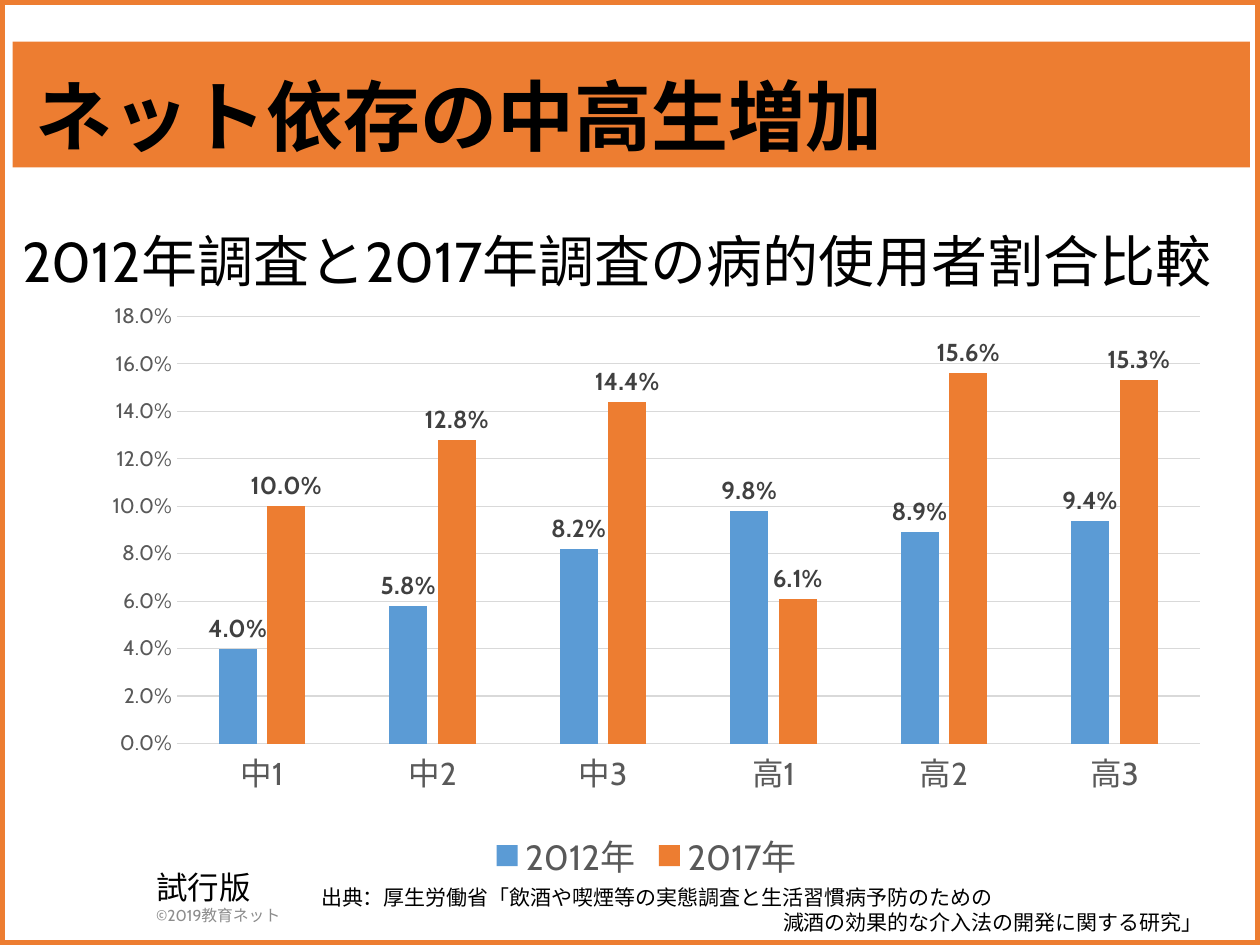
"""Build a slide comparing problem internet use among students in 2012 and 2017."""
from lxml.etree import SubElement
from pptx import Presentation
from pptx.chart.data import CategoryChartData
from pptx.dml.color import RGBColor
from pptx.enum.chart import XL_CHART_TYPE, XL_LABEL_POSITION, XL_LEGEND_POSITION, XL_TICK_MARK
from pptx.enum.shapes import MSO_SHAPE
from pptx.enum.text import MSO_ANCHOR, PP_ALIGN
from pptx.oxml import parse_xml
from pptx.oxml.ns import nsdecls, qn
from pptx.util import Pt

LATIN, ASIAN = "Cabin", "Noto Sans CJK JP"
ORANGE, BLUE, BLACK, GRAY, RULE = "ED7D31", "5B9BD5", "000000", "595959", "D9D9D9"
SIZE = (720, 540)

TITLE = "ネット依存の中高生増加"
NOTICE = [("試行版", 18, BLACK, LATIN, 0), ("©2019教育ネット", 9, "8C8C8C", LATIN, 0)]
HEAD = [("2012年調査と2017年調査の病的使用者割合比較", 32, BLACK, LATIN, 0)]
SOURCE = [
    ("出典：厚生労働省「飲酒や喫煙等の実態調査と生活習慣病予防のための", 12, BLACK, ASIAN, 0),
    ("減酒の効果的な介入法の開発に関する研究」", 12, BLACK, ASIAN, 22 * 12),
]
GRADES = ["中1", "中2", "中3", "高1", "高2", "高3"]
SERIES = [
    ("2012年", BLUE, [0.04, 0.058, 0.082, 0.098, 0.089, 0.094]),
    ("2017年", ORANGE, [0.1, 0.128, 0.144, 0.061, 0.156, 0.153]),
]
PLOT = {"x": 0.084, "y": 0.066, "w": 0.905, "h": 0.698}
PLACES = {
    "border": (0, 0, *SIZE),
    "notice": (82.08, 492.48, 208.08, 41.04),
    "bar": (7.2, 23.76, 707.04, 72),
    "title": (12.96, 38.16, 626.4, 61.92),
    "chart": (46.8, 157.68, 645.84, 349.92),
    "head": (5.76, 126, 725.04, 46.08),
    "source": (176.4, 501.84, 645.84, 36),
}


def put(item, **values):
    for name, value in values.items():
        setattr(item, name, value)


def box(name):
    return [Pt(part) for part in PLACES[name]]


def tint(item, color):
    """Colour a font, a fill or a line."""
    if hasattr(item, "solid"):
        item.solid()
        item = item.fore_color
    elif hasattr(item, "color"):
        item = item.color
    item.rgb = RGBColor.from_string(color)


def style(font, size, color, face=LATIN, bold=False):
    put(font, size=Pt(size), name=face, bold=bold)
    tint(font, color)


def rule(line, color, width=0.75):
    tint(line, color)
    line.width = Pt(width)


def panel(slide, name):
    shape = slide.shapes.add_shape(MSO_SHAPE.RECTANGLE, *box(name))
    shape.shadow.inherit = False
    return shape


def write(slide, name, lines):
    frame = slide.shapes.add_textbox(*box(name)).text_frame
    frame.word_wrap = True
    for spot, (text, size, color, face, indent) in enumerate(lines):
        para = frame.add_paragraph() if spot else frame.paragraphs[0]
        if indent:
            para._p.get_or_add_pPr().set("marL", str(Pt(indent)))
        run = para.add_run()
        run.text = text
        style(run.font, size, color, face)


def place(chart):
    """Fix the inner plot area by fractions of the chart."""
    area = chart._chartSpace.find(".//" + qn("c:plotArea"))
    old = area.find(qn("c:layout"))
    if old is not None:
        area.remove(old)
    layout = parse_xml(f"<c:layout {nsdecls('c')}/>")
    manual = SubElement(layout, qn("c:manualLayout"))
    parts = {"layoutTarget": "inner", "xMode": "edge", "yMode": "edge", **PLOT}
    for tag, value in parts.items():
        SubElement(manual, qn("c:" + tag)).set("val", str(value))
    area.insert(0, layout)


def asian(tree):
    """Give every run that names a Latin font its East Asian font."""
    for latin in list(tree.iter(qn("a:latin"))):
        latin.addnext(parse_xml(f'<a:ea {nsdecls("a")} typeface="{ASIAN}"/>'))


def draw(slide):
    data = CategoryChartData(number_format="0.0%")
    data.categories = GRADES
    for name, _, values in SERIES:
        data.add_series(name, values)
    kind = XL_CHART_TYPE.COLUMN_CLUSTERED
    chart = slide.shapes.add_chart(kind, *box("chart"), data).chart
    put(chart, has_title=False, has_legend=True)
    style(chart.font, 10, BLACK)
    put(chart.legend, position=XL_LEGEND_POSITION.BOTTOM, include_in_layout=False)
    style(chart.legend.font, 20, GRAY)

    none = XL_TICK_MARK.NONE
    cat, val = chart.category_axis, chart.value_axis
    for axis, size in ((cat, 18), (val, 12)):
        put(axis, major_tick_mark=none, minor_tick_mark=none)
        style(axis.tick_labels.font, size, GRAY)
    rule(cat.format.line, RULE)
    put(val, minimum_scale=0, maximum_scale=0.18, major_unit=0.02, has_major_gridlines=True)
    put(val.tick_labels, number_format="0.0%", number_format_is_linked=False)
    val.format.line.fill.background()
    rule(val.major_gridlines.format.line, RULE)

    plot = chart.plots[0]
    put(plot, gap_width=219, overlap=-27, vary_by_categories=False)
    for series, (_, color, _) in zip(plot.series, SERIES):
        series.invert_if_negative = False
        tint(series.format.fill, color)
        labels = series.data_labels
        put(labels, show_value=True, number_format="0.0%", number_format_is_linked=False,
            position=XL_LABEL_POSITION.OUTSIDE_END)
        style(labels.font, 14, "404040", bold=True)
    place(chart)
    asian(chart._chartSpace)


def main():
    deck = Presentation()
    put(deck, slide_width=Pt(SIZE[0]), slide_height=Pt(SIZE[1]))
    slide = deck.slides.add_slide(deck.slide_layouts[5])

    border = panel(slide, "border")
    border.fill.background()
    rule(border.line, ORANGE, 6)
    write(slide, "notice", NOTICE)
    bar = panel(slide, "bar")
    tint(bar.fill, ORANGE)
    bar.line.fill.background()

    title = slide.shapes.title
    put(title, **dict(zip(("left", "top", "width", "height"), box("title"))))
    title.text_frame.text = TITLE
    put(title.text_frame, vertical_anchor=MSO_ANCHOR.MIDDLE, word_wrap=True)
    para = title.text_frame.paragraphs[0]
    put(para, alignment=PP_ALIGN.LEFT, line_spacing=0.9)
    style(para.runs[0].font, 44, BLACK, ASIAN, True)
    bar._element.addnext(title._element)

    draw(slide)
    write(slide, "head", HEAD)
    write(slide, "source", SOURCE)
    asian(slide._element)
    deck.save("out.pptx")


if __name__ == "__main__":
    main()
